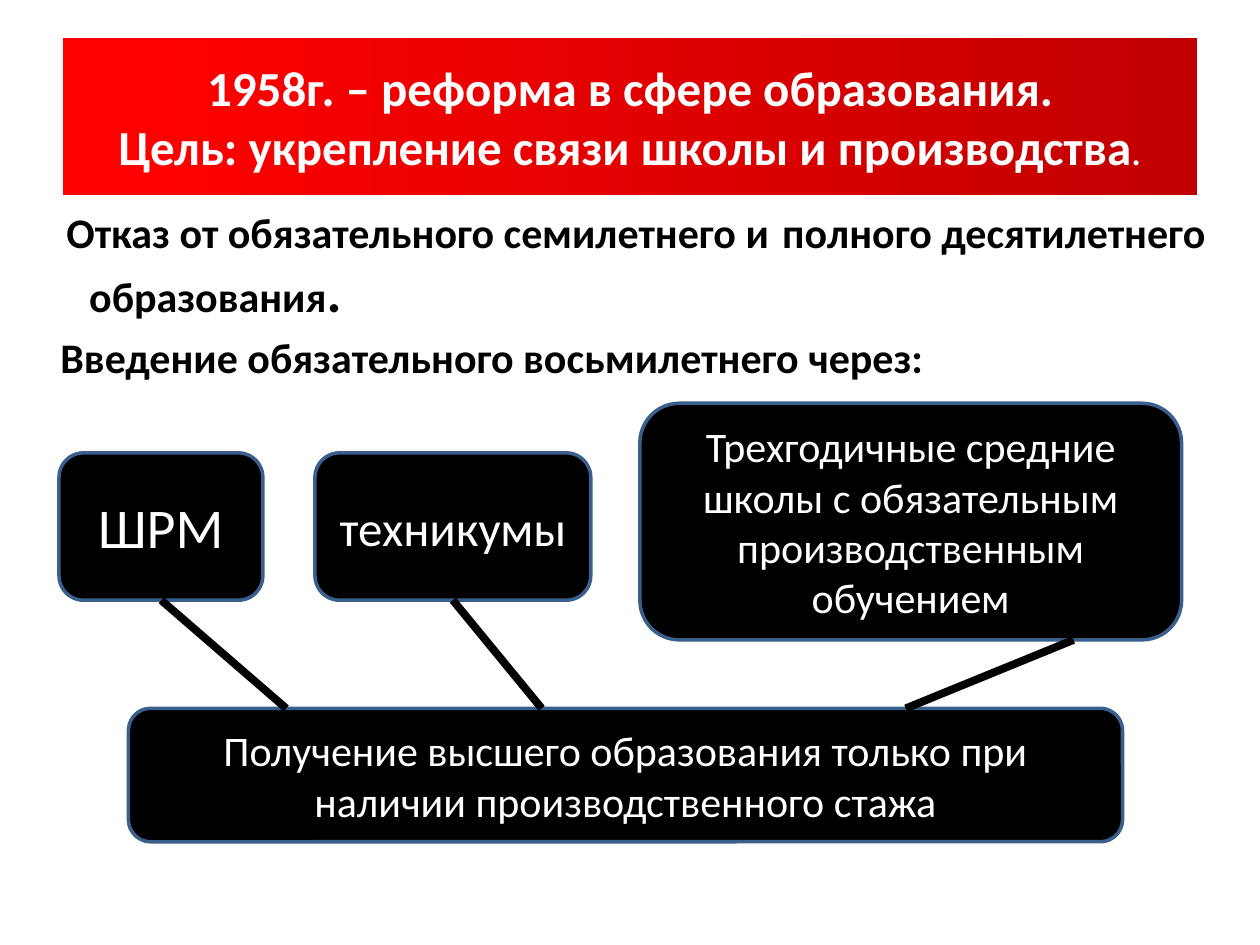
"""Build a slide on the 1958 education reform with a scheme of study paths."""
from dataclasses import dataclass

from lxml.etree import SubElement
from pptx import Presentation
from pptx.dml.color import RGBColor
from pptx.enum.shapes import MSO_CONNECTOR, MSO_SHAPE
from pptx.enum.text import MSO_ANCHOR, PP_ALIGN
from pptx.oxml.ns import qn
from pptx.util import Cm, Pt

BLACK = RGBColor(0x00, 0x00, 0x00)
WHITE = RGBColor(0xFF, 0xFF, 0xFF)
RED = RGBColor(0xFF, 0x00, 0x00)
DARK_RED = RGBColor(0xC0, 0x00, 0x00)
BORDER_BLUE = RGBColor(0x3A, 0x5F, 0x8C)
FONT = "Calibri"


@dataclass(frozen=True)
class Block:
    text: str
    size: int
    left: float
    top: float
    width: float
    height: float


@dataclass(frozen=True)
class Link:
    start_x: float
    start_y: float
    end_x: float
    end_y: float


BLOCKS = [
    Block("ШРМ", 32, 1.19, 9.13, 4.11, 2.97),
    Block("техникумы", 28, 6.35, 9.13, 5.56, 2.97),
    Block("Трехгодичные средние школы с обязательным производственным обучением",
          24, 12.9, 8.13, 10.92, 4.77),
    Block("Получение высшего образования только при наличии производственного стажа",
          24, 2.59, 14.28, 20.04, 2.69),
]
LINKS = [
    Link(3.25, 12.1, 5.77, 14.28),
    Link(9.13, 12.1, 10.92, 14.28),
    Link(21.64, 12.9, 18.26, 14.28),
]


def add_span(para, text: str, size: int, color: RGBColor, bold: bool = False) -> None:
    span = para.add_run()
    span.text = text
    span.font.name = FONT
    span.font.size = Pt(size)
    span.font.bold = bold
    span.font.color.rgb = color


def add_box(page, kind, left: float, top: float, width: float, height: float):
    box = page.shapes.add_shape(kind, Cm(left), Cm(top), Cm(width), Cm(height))
    box.shadow.inherit = False
    box.text_frame.word_wrap = True
    box.text_frame.vertical_anchor = MSO_ANCHOR.MIDDLE
    box.text_frame.paragraphs[0].alignment = PP_ALIGN.CENTER
    return box


def add_title(page) -> None:
    box = add_box(page, MSO_SHAPE.RECTANGLE, 1.27, 0.76, 22.86, 3.18)
    box.line.fill.background()
    box.fill.gradient()
    box.fill.gradient_angle = 0
    stops = box.fill.gradient_stops
    for stop, position, color in zip(stops, (0.07, 1), (RED, DARK_RED)):
        stop.position = position
        stop.color.rgb = color
    para = box.text_frame.paragraphs[0]
    add_span(para, "1958г. – реформа в сфере образования.", 28, WHITE, True)
    para.add_line_break()
    add_span(para, "Цель: укрепление связи школы и производства", 28, WHITE, True)
    add_span(para, ".", 24, WHITE)


def set_indent(para, margin: float, first_line: float) -> None:
    properties = para._p.get_or_add_pPr()
    properties.set("marL", str(Cm(margin)))
    properties.set("indent", str(Cm(first_line)))


def add_tab_stop(para, position: float) -> None:
    tabs = SubElement(para._p.get_or_add_pPr(), qn("a:tabLst"))
    SubElement(tabs, qn("a:tab"), pos=str(Cm(position)), algn="l")


def add_measures(page) -> None:
    box = page.shapes.add_textbox(Cm(0.58), Cm(4.04), Cm(24), Cm(4))
    frame = box.text_frame
    frame.word_wrap = True
    refusal = frame.paragraphs[0]
    set_indent(refusal, 0.97, -0.46)
    add_tab_stop(refusal, 15.45)
    add_span(refusal, "Отказ от обязательного семилетнего и\tполного "
             "десятилетнего образования", 24, BLACK, True)
    add_span(refusal, ".", 32, BLACK, True)
    introduction = frame.add_paragraph()
    set_indent(introduction, 0.97, -0.58)
    introduction.space_before = Pt(4)
    add_span(introduction, "Введение обязательного восьмилетнего через:", 24, BLACK, True)


def add_block(page, block: Block) -> None:
    box = add_box(page, MSO_SHAPE.FLOWCHART_ALTERNATE_PROCESS,
                  block.left, block.top, block.width, block.height)
    box.fill.solid()
    box.fill.fore_color.rgb = BLACK
    box.line.color.rgb = BORDER_BLUE
    box.line.width = Pt(2)
    add_span(box.text_frame.paragraphs[0], block.text, block.size, WHITE)


def add_link(page, link: Link) -> None:
    line = page.shapes.add_connector(
        MSO_CONNECTOR.STRAIGHT, Cm(link.start_x), Cm(link.start_y),
        Cm(link.end_x), Cm(link.end_y))
    line.line.color.rgb = BLACK
    line.line.width = Pt(4.5)
    SubElement(line._element.spPr, qn("a:effectLst"))


def main() -> None:
    deck = Presentation()
    deck.slide_width = Cm(25.4)
    deck.slide_height = Cm(19.05)
    page = deck.slides.add_slide(deck.slide_layouts[6])
    add_title(page)
    add_measures(page)
    for block in BLOCKS:
        add_block(page, block)
    for link in LINKS:
        add_link(page, link)
    deck.save("out.pptx")


if __name__ == "__main__":
    main()
